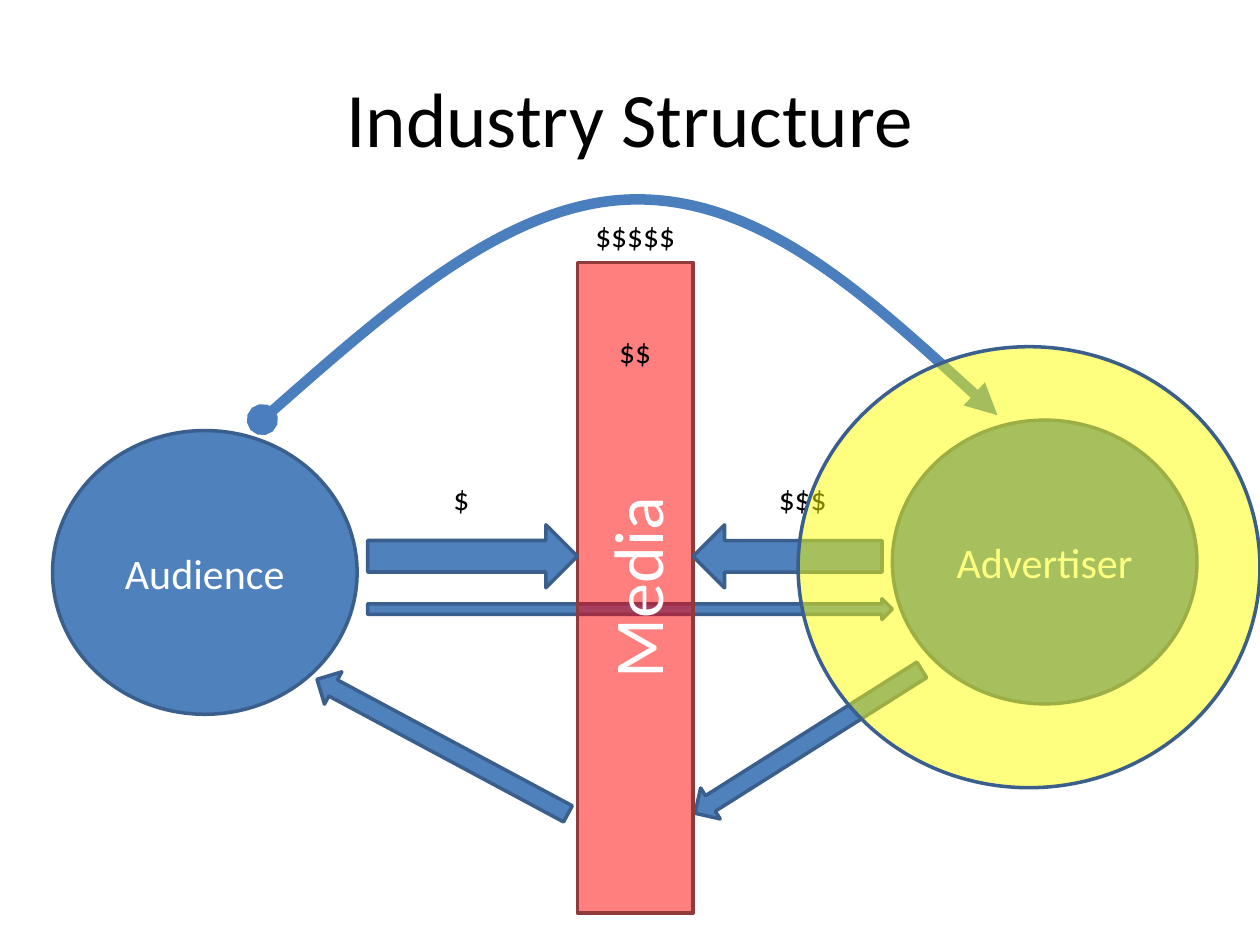
import dataclasses

import lxml.etree
import pptx
import pptx.dml.color
import pptx.enum.shapes
import pptx.enum.text
import pptx.oxml.ns
import pptx.util

Cm = pptx.util.Cm
Pt = pptx.util.Pt
RGBColor = pptx.dml.color.RGBColor
Kind = pptx.enum.shapes.MSO_SHAPE
Align = pptx.enum.text.PP_ALIGN
Anchor = pptx.enum.text.MSO_ANCHOR
qn = pptx.oxml.ns.qn

BLUE = RGBColor(0x4F, 0x81, 0xBD)
DARK_BLUE = RGBColor(0x3A, 0x5F, 0x8C)
ARC_BLUE = RGBColor(0x4B, 0x7E, 0xBC)
RED = RGBColor(0xFF, 0x00, 0x00)
DARK_RED = RGBColor(0x8E, 0x3B, 0x39)
YELLOW = RGBColor(0xFF, 0xFF, 0x00)
WHITE = RGBColor(0xFF, 0xFF, 0xFF)
BLACK = RGBColor(0x00, 0x00, 0x00)
FONT = "Calibri"


@dataclasses.dataclass
class Box:
    left: float
    top: float
    width: float
    height: float

    def lengths(self):
        return Cm(self.left), Cm(self.top), Cm(self.width), Cm(self.height)

    def inner(self, left, top, width, height):
        return Box(self.left + left, self.top + top, width, height)


def write(frame, text, size, color, align=Align.CENTER):
    para = frame.paragraphs[0]
    para.alignment = align
    span = para.add_run()
    span.text = text
    span.font.name = FONT
    span.font.size = Pt(size)
    span.font.color.rgb = color


def add_figure(shapes, kind, box, fill=BLUE, line=DARK_BLUE, rotation=0, opacity=100):
    figure = shapes.add_shape(kind, *box.lengths())
    figure.shadow.inherit = False
    figure.rotation = rotation
    figure.fill.solid()
    figure.fill.fore_color.rgb = fill
    figure.line.color.rgb = line
    figure.line.width = Pt(2)
    if opacity < 100:
        color = figure._element.spPr.find(qn("a:solidFill"))[0]
        lxml.etree.SubElement(color, qn("a:alpha"), val=str(opacity * 1000))
    return figure


def add_label(shapes, box, text, align=Align.CENTER):
    label = shapes.add_textbox(*box.lengths())
    label.text_frame.word_wrap = True
    write(label.text_frame, text, 18, BLACK, align)


def add_title(page, box, text):
    title = page.shapes.title
    title.left, title.top, title.width, title.height = box.lengths()
    title.text_frame.vertical_anchor = Anchor.MIDDLE
    write(title.text_frame, text, 44, BLACK)


def add_party(page, box, name):
    party = add_figure(page.shapes, Kind.OVAL, box)
    party.text_frame.vertical_anchor = Anchor.MIDDLE
    write(party.text_frame, name, 24, WHITE)


def add_media(page, box):
    media = add_figure(page.shapes, Kind.RECTANGLE, box, RED, DARK_RED, opacity=50)
    media.text_frame.vertical_anchor = Anchor.MIDDLE
    media.text_frame._txBody.bodyPr.set("vert", "vert270")
    write(media.text_frame, "Media", 40, WHITE)


def add_payment(page, box, text, label_left, label_width, rotation=0):
    group = page.shapes.add_group_shape()
    arrow_box = box.inner(0, 1.05, box.width, box.height - 1.05)
    add_figure(group.shapes, Kind.RIGHT_ARROW, arrow_box, rotation=rotation)
    label_box = box.inner(label_left, 0, label_width, 1.06)
    add_label(group.shapes, label_box, text, Align.LEFT)


def add_direct_arc(page, box):
    fractions = [(0, 1), (0.17, 0.5), (0.34, 0), (0.51, 0), (0.68, 0), (0.84, 0.49), (1, 0.98)]
    points = [
        (Cm(box.left + x * box.width), Cm(box.top + y * box.height)) for x, y in fractions
    ]
    group = page.shapes.add_group_shape()
    builder = group.shapes.build_freeform(*points[0])
    builder.add_line_segments(points[1:], close=False)
    arc = builder.convert_to_shape()
    arc.shadow.inherit = False
    arc.fill.background()
    arc.line.color.rgb = ARC_BLUE
    arc.line.width = Pt(6)

    segments = list(arc._element.iter(qn("a:lnTo")))
    for start in range(0, len(segments), 3):
        curve = lxml.etree.Element(qn("a:cubicBezTo"))
        segments[start].addprevious(curve)
        for segment in segments[start:start + 3]:
            curve.append(segment[0])
            segment.getparent().remove(segment)

    outline = arc._element.spPr.find(qn("a:ln"))
    lxml.etree.SubElement(outline, qn("a:headEnd"), type="oval")
    lxml.etree.SubElement(outline, qn("a:tailEnd"), type="triangle")
    add_label(group.shapes, box.inner(6.14, 0.22, 2.75, 1.02), "$$$$$")


def add_structure(page, box):
    add_figure(page.shapes, Kind.RIGHT_ARROW, box.inner(13.59, 14.58, 5.41, 0.74), rotation=147.7)
    add_figure(page.shapes, Kind.RIGHT_ARROW, box.inner(7.41, 12.07, 10.58, 0.42))
    add_party(page, box.inner(17.99, 8.47, 6.14, 5.72), "Advertiser")
    add_party(page, box.inner(1.06, 8.68, 6.14, 5.72), "Audience")
    add_media(page, box.inner(11.64, 5.29, 2.33, 13.12))
    add_figure(page.shapes, Kind.RIGHT_ARROW, box.inner(6.05, 14.68, 5.74, 0.74), rotation=208.2)
    add_payment(page, box.inner(7.41, 9.53, 4.23, 2.32), "$", 1.48, 1.27)
    add_payment(page, box.inner(13.97, 9.53, 3.81, 2.32), "$$$", 1.48, 2.12, rotation=180)
    add_direct_arc(page, box.inner(5.29, 4.02, 14.82, 4.44))
    add_label(page.shapes, box.inner(11.85, 6.56, 1.91, 1.02), "$$")
    add_figure(page.shapes, Kind.OVAL, box.inner(16.09, 6.99, 9.31, 8.89), YELLOW, opacity=50)


def main():
    deck = pptx.Presentation()
    deck.slide_width = Cm(25.4)
    deck.slide_height = Cm(19.05)
    page = deck.slides.add_slide(deck.slide_layouts[5])
    whole = Box(0, 0, 25.4, 19.05)
    add_title(page, whole.inner(1.27, 0.76, 22.86, 3.18), "Industry Structure")
    add_structure(page, whole)
    deck.save("out.pptx")


if __name__ == "__main__":
    main()
